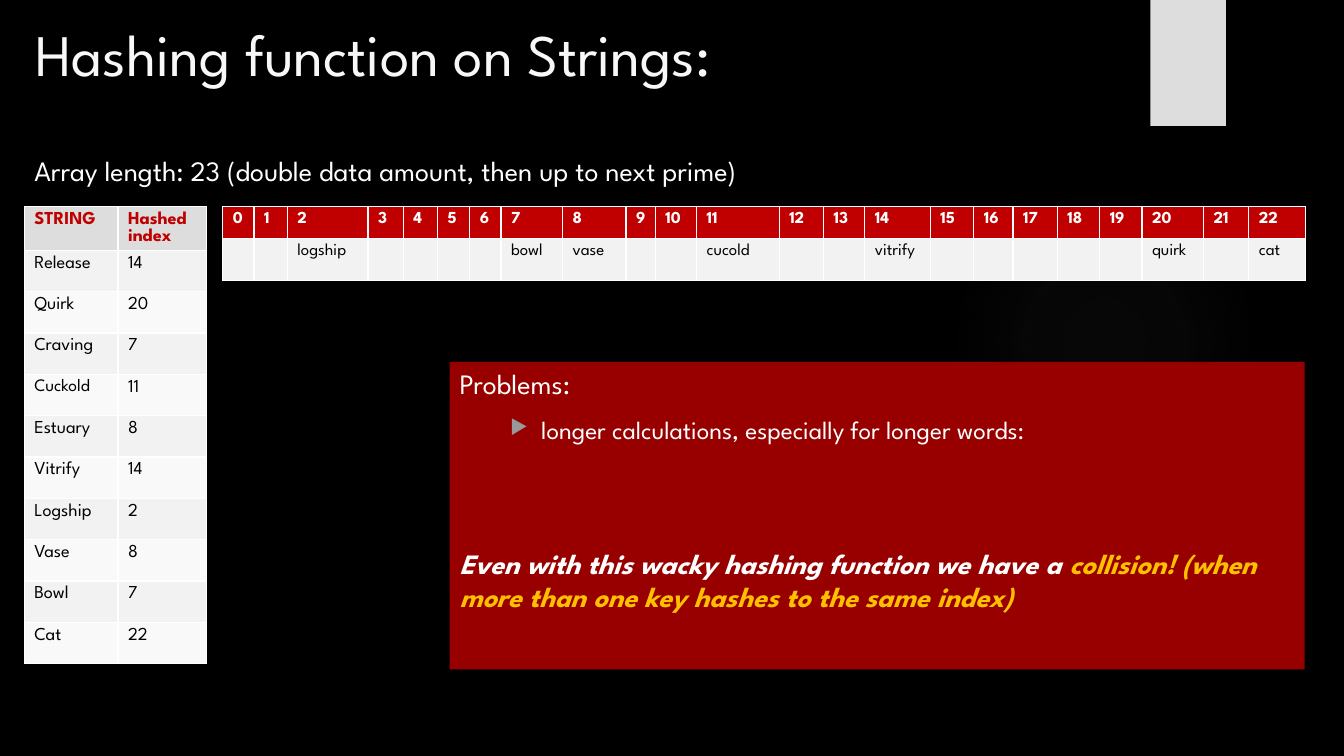
from lxml import etree
from pptx import Presentation
from pptx.dml.color import RGBColor
from pptx.enum.shapes import MSO_SHAPE
from pptx.enum.text import MSO_ANCHOR, PP_ALIGN
from pptx.oxml import parse_xml
from pptx.oxml.ns import nsdecls, qn
from pptx.util import Inches, Pt

RECTANGLE, OVAL = MSO_SHAPE.RECTANGLE, MSO_SHAPE.OVAL
LEFT, TOP, MIDDLE = PP_ALIGN.LEFT, MSO_ANCHOR.TOP, MSO_ANCHOR.MIDDLE
FONT = "League Spartan"
COLORS = {
    "black": "000000", "white": "FFFFFF", "title": "F8F8F8", "tab": "DDDDDD",
    "red": "C00000", "panel": "980000", "gold": "FFC000", "glow": "666666",
    "bullet": "999999", "band": "F2F2F2", "light band": "F9F9F9",
}


def style_font(font, size, color, bold=False, italic=False):
    font.name, font.size, font.bold, font.italic = FONT, Pt(size), bold, italic
    font.color.rgb = RGBColor.from_string(COLORS[color])


def fill_cell(cell, text, size, color, fill, bold=False):
    cell.text = text
    cell.fill.solid()
    cell.fill.fore_color.rgb = RGBColor.from_string(COLORS[fill])
    paragraph = cell.text_frame.paragraphs[0]
    style_font(paragraph.font, size, color, bold)
    for run in paragraph.runs:
        style_font(run.font, size, color, bold)


presentation = Presentation()
presentation.slide_width, presentation.slide_height = Inches(13.33), Inches(7.5)
slide = presentation.slides.add_slide(presentation.slide_layouts[1])
slide.background.fill.solid()
slide.background.fill.fore_color.rgb = RGBColor.from_string(COLORS["black"])

# Background decoration and the problems panel
shapes = []
for kind, left, top, width, height, color in [
    (OVAL, 9.41, 1.83, 3.08, 3.08, "glow"),
    (RECTANGLE, 11.41, 0, 0.75, 1.25, "tab"),
    (RECTANGLE, 4.46, 3.59, 8.48, 3.05, "panel"),
]:
    shape = slide.shapes.add_shape(
        kind, Inches(left), Inches(top), Inches(width), Inches(height))
    shape.shadow.inherit = False
    shape.fill.solid()
    shape.fill.fore_color.rgb = RGBColor.from_string(COLORS[color])
    shape.line.fill.background()
    shapes.append(shape)
glow, tab, panel = shapes

stops = "".join(
    f'<a:gs pos="{position}000"><a:srgbClr val="{COLORS["glow"]}">'
    f'<a:alpha val="{alpha}000"/></a:srgbClr></a:gs>'
    for position, alpha in [(0, 7), (36, 6), (69, 0)])
solid_fill = glow._element.spPr.find(qn("a:solidFill"))
solid_fill.getparent().replace(solid_fill, parse_xml(
    f'<a:gradFill {nsdecls("a")}><a:gsLst>{stops}</a:gsLst><a:path path="circle">'
    '<a:fillToRect l="50000" t="50000" r="50000" b="50000"/></a:path></a:gradFill>'))

# Title and subtitle line
title, body = slide.placeholders
for placeholder, text, box, size, color, anchor in [
    (title, "Hashing function on Strings:", (0.25, 0.13, 9.4, 0.8), 42, "title", MIDDLE),
    (body, "Array length: 23 (double data amount, then up to next prime)",
     (0.24, 1.47, 10.99, 0.6), 20, "white", TOP),
]:
    placeholder.left, placeholder.top, placeholder.width, placeholder.height = map(Inches, box)
    frame = placeholder.text_frame
    frame.text = text
    frame.vertical_anchor = anchor
    paragraph = frame.paragraphs[0]
    paragraph.alignment = LEFT
    paragraph.space_before = Pt(0)
    properties = paragraph._p.get_or_add_pPr()
    properties.set("marL", "0")
    properties.set("indent", "0")
    etree.SubElement(properties, qn("a:buNone"))
    style_font(paragraph.runs[0].font, size, color)

# Strings and their hashed indexes
hashed_strings = [
    ("Release", 14), ("Quirk", 20), ("Craving", 7), ("Cuckold", 11), ("Estuary", 8),
    ("Vitrify", 14), ("Logship", 2), ("Vase", 8), ("Bowl", 7), ("Cat", 22),
]
string_table = slide.shapes.add_table(
    len(hashed_strings) + 1, 2, Inches(0.24), Inches(2.05), Inches(1.82), Inches(4.5)).table
string_table.columns[0].width = Inches(0.93)
string_table.columns[1].width = Inches(0.88)
for row in string_table.rows:
    row.height = Inches(0.41)
for column, heading in enumerate(["STRING", "Hashed index"]):
    fill_cell(string_table.cell(0, column), heading, 13, "red", "tab", bold=True)
for row, (word, index) in enumerate(hashed_strings, start=1):
    band = "band" if row % 2 else "light band"
    fill_cell(string_table.cell(row, 0), word, 12.5 if word == "Cuckold" else 13, "black", band)
    fill_cell(string_table.cell(row, 1), str(index), 13, "black", band)

# Problems panel
frame = panel.text_frame
frame.word_wrap = True
frame.vertical_anchor = TOP
for number, (space_before, size, bold, pieces) in enumerate([
    (0, 20, False, [("Problems:", "white")]),
    (10, 18, False, [("longer calculations, especially for longer words:", "white")]),
    (72.5, 20, True, [
        ("Even with this wacky hashing function we have a ", "white"),
        ("collision! (when more than one key hashes to the same index)", "gold")]),
]):
    paragraph = frame.add_paragraph() if number else frame.paragraphs[0]
    paragraph.alignment = LEFT
    paragraph.space_before = Pt(space_before)
    for text, color in pieces:
        run = paragraph.add_run()
        run.text = text
        style_font(run.font, size, color, bold, italic=bold)

properties = frame.paragraphs[1]._p.get_or_add_pPr()
properties.set("marL", str(Inches(0.81)))
properties.set("indent", str(Inches(-0.31)))
bullet_color = etree.SubElement(properties, qn("a:buClr"))
etree.SubElement(bullet_color, qn("a:srgbClr"), val=COLORS["bullet"])
etree.SubElement(properties, qn("a:buSzPct"), val="80000")
etree.SubElement(properties, qn("a:buChar"), char="▶")

# Hash array
column_widths = [
    0.31, 0.33, 0.8, 0.35, 0.34, 0.32, 0.31, 0.61, 0.63, 0.29, 0.41, 0.82,
    0.44, 0.41, 0.65, 0.43, 0.39, 0.44, 0.42, 0.42, 0.61, 0.45, 0.56,
]
stored_words = {2: "logship", 7: "bowl", 8: "vase", 11: "cucold", 14: "vitrify",
                20: "quirk", 22: "cat"}
array_table = slide.shapes.add_table(
    2, len(column_widths), Inches(2.21), Inches(2.05), Inches(10.73), Inches(0.72)).table
array_table.rows[0].height = Inches(0.32)
array_table.rows[1].height = Inches(0.41)
for index, width in enumerate(column_widths):
    array_table.columns[index].width = Inches(width)
    fill_cell(array_table.cell(0, index), str(index), 12, "white", "red", bold=True)
    fill_cell(array_table.cell(1, index), stored_words.get(index, ""), 12, "black", "band")

presentation.save("out.pptx")
